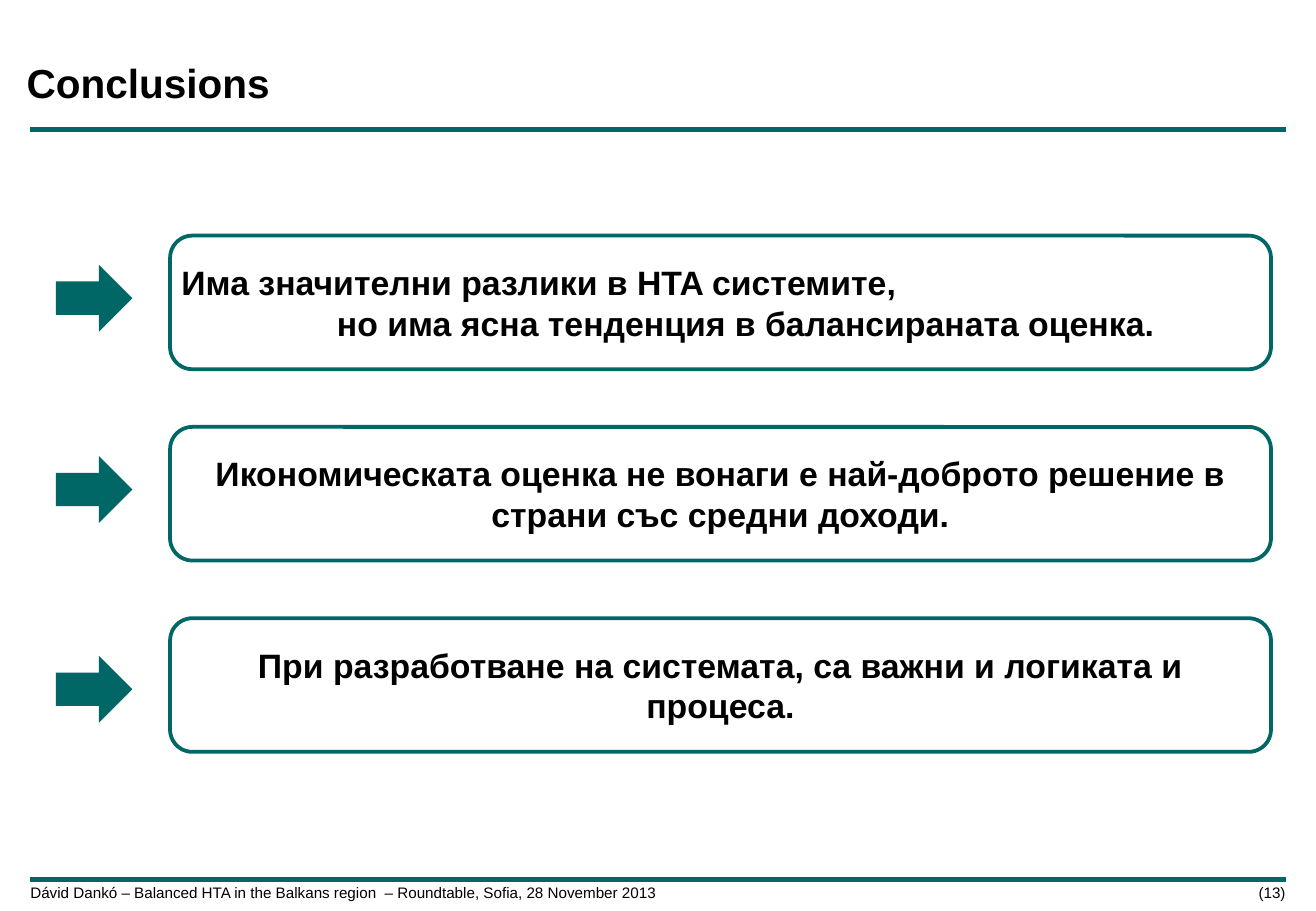
from pptx import Presentation
from pptx.dml.color import RGBColor
from pptx.enum.shapes import MSO_CONNECTOR as Connector, MSO_SHAPE as Shape
from pptx.enum.text import MSO_ANCHOR as Anchor, PP_ALIGN as Align
from pptx.oxml.ns import qn
from pptx.util import Inches, Pt
from lxml.etree import SubElement

WIDTH, HEIGHT = 10.83, 7.5
TEAL, BLACK, WHITE = "006666", "000000", "FFFFFF"
LEFT, RIGHT = 0.25, 10.58
ARROW_COLUMN, BOX_COLUMN = 0.46, 1.4
FIRST_ROW, ROW_PITCH = 1.94, 1.575
SECOND_LINE_INDENT = 1.28

CONCLUSIONS = [
    (["Има значителни разлики в HTA системите,",
      "но има ясна тенденция в балансираната оценка."], 0.24),
    (["Икономическата оценка не вонаги е най-доброто решение в страни със средни доходи."], 0.24),
    (["При разработване на системата, са важни и логиката и процеса."], 0.31),
]
FOOTER = "Dávid Dankó – Balanced HTA in the Balkans region  – Roundtable, Sofia, 28 November 2013\t(13)"


def color(value):
    return RGBColor.from_string(value)


def set_frame(frame, anchor, side, edge):
    frame.word_wrap = True
    frame.vertical_anchor = anchor
    frame.margin_left = frame.margin_right = Inches(side)
    frame.margin_top = frame.margin_bottom = Inches(edge)


def set_font(para, size, bold):
    para.font.name = "Arial"
    para.font.size = Pt(size)
    para.font.bold = bold
    para.font.color.rgb = color(BLACK)


def add_text(page, text, area, size, bold=False, anchor=Anchor.TOP, edge=0):
    box = page.shapes.add_textbox(*map(Inches, area))
    set_frame(box.text_frame, anchor, 0, edge)
    para = box.text_frame.paragraphs[0]
    para.text = text
    para.line_spacing = 0.9
    if "\t" in text:
        stops = SubElement(para._p.get_or_add_pPr(), qn("a:tabLst"))
        SubElement(stops, qn("a:tab"), pos=str(Inches(RIGHT - LEFT)), algn="r")
    set_font(para, size, bold)


def add_rule(page, y):
    rule = page.shapes.add_connector(
        Connector.STRAIGHT, Inches(LEFT), Inches(y), Inches(RIGHT), Inches(y))
    rule.line.color.rgb = color(TEAL)
    rule.line.width = Pt(3)
    SubElement(rule._element.spPr, qn("a:effectLst"))


def add_shape(page, kind, area, fill):
    shape = page.shapes.add_shape(kind, *map(Inches, area))
    shape.shadow.inherit = False
    shape.fill.solid()
    shape.fill.fore_color.rgb = color(fill)
    return shape


def add_conclusion(page, row, lines, arrow_drop):
    top = FIRST_ROW + row * ROW_PITCH
    box = add_shape(page, Shape.ROUNDED_RECTANGLE, (BOX_COLUMN, top, 9.06, 1.1), WHITE)
    box.line.color.rgb = color(TEAL)
    box.line.width = Pt(2.25)
    frame = box.text_frame
    set_frame(frame, Anchor.MIDDLE, 0.04, 0.2)
    frame.text = "\n".join(lines)
    for index, para in enumerate(frame.paragraphs):
        para.alignment = Align.LEFT if len(lines) > 1 else Align.CENTER
        if index:
            para._p.get_or_add_pPr().set("marL", str(Inches(SECOND_LINE_INDENT)))
        set_font(para, 20, True)
    arrow = add_shape(page, Shape.RIGHT_ARROW, (ARROW_COLUMN, top + arrow_drop, 0.63, 0.55), TEAL)
    arrow.line.fill.background()


def main():
    deck = Presentation()
    deck.slide_width, deck.slide_height = Inches(WIDTH), Inches(HEIGHT)
    page = deck.slides.add_slide(deck.slide_layouts[6])
    add_text(page, FOOTER, (LEFT, 7.29, 10.36, 0.14), 9)
    for y in (1.07, 7.24):
        add_rule(page, y)
    add_text(page, "Conclusions", (0.22, 0.24, 8.58, 0.68), 24, True, Anchor.BOTTOM, 0.04)
    for row, (lines, arrow_drop) in enumerate(CONCLUSIONS):
        add_conclusion(page, row, lines, arrow_drop)
    deck.save("out.pptx")


if __name__ == "__main__":
    main()
